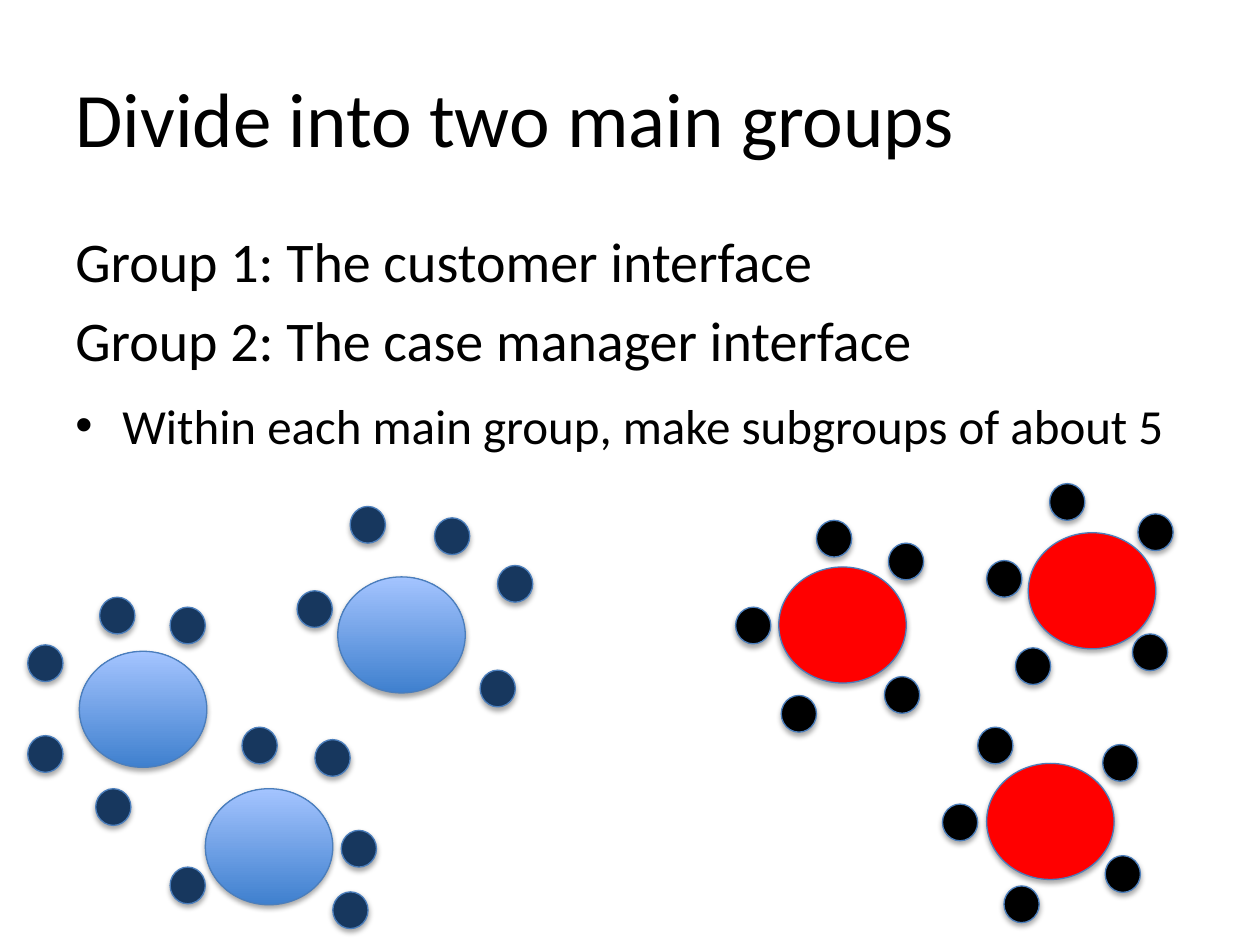
"""Build a slide that divides a room into two main groups with subgroups of five."""
from dataclasses import dataclass

from lxml.etree import SubElement
from pptx import Presentation
from pptx.dml.color import RGBColor
from pptx.enum.shapes import MSO_SHAPE
from pptx.enum.text import MSO_ANCHOR
from pptx.oxml.ns import qn
from pptx.util import Cm, Pt

TITLE = "Divide into two main groups"
GROUPS = ["Group 1: The customer interface", "Group 2: The case manager interface"]
INSTRUCTION = ["Within each main group, make subgroups of about 5"]

CUSTOMER_SUBGROUPS = [
    ((1.6, 13.13), [(2.01, 12.04), (0.56, 13), (0.56, 14.83), (3.43, 12.24), (1.93, 15.9)]),
    ((4.14, 15.9), [(6.35, 14.91), (4.88, 14.66), (3.43, 17.48), (6.71, 17.98), (6.88, 16.74)]),
    ((6.81, 11.63), [(10.03, 11.4), (8.76, 10.44), (7.06, 10.21), (5.99, 11.91), (9.68, 13.51)]),
]
MANAGER_SUBGROUPS = [
    ((15.7, 11.43), [(16.46, 10.49), (17.91, 10.95), (17.83, 13.64), (15.75, 14.02), (14.83, 12.24)]),
    ((19.89, 15.39), [(19.71, 14.66), (19, 16.21), (20.24, 17.86), (22.28, 17.25), (22.23, 15.01)]),
    ((20.73, 10.74), [(21.16, 9.75), (20.47, 13.06), (19.89, 11.3), (22.94, 10.36), (22.83, 12.78)]),
]
TABLE_SIZE = (2.57, 2.34)
PERSON_SIZE = (0.71, 0.74)
TEXT_LEFT, TEXT_WIDTH = 1.27, 22.86


@dataclass(frozen=True)
class Theme:
    font: str = "Calibri"
    text: str = "000000"
    title_size: int = 44
    group_size: int = 32
    instruction_size: int = 28
    outline: str = "4B7EBC"
    shadow: str = "000000"
    customer_table: tuple = ("3F80CE", "A4C4FF")
    customer_person: tuple = ("17375E",)
    manager_table: tuple = ("FF0000",)
    manager_person: tuple = ("000000",)


THEME = Theme()


def add_text(slide, lines, top, height, size, anchor=MSO_ANCHOR.TOP, spacing=0.0, bullet=False):
    box = slide.shapes.add_textbox(Cm(TEXT_LEFT), Cm(top), Cm(TEXT_WIDTH), Cm(height))
    frame = box.text_frame
    frame.word_wrap = True
    frame.vertical_anchor = anchor
    for index, line in enumerate(lines):
        paragraph = frame.paragraphs[0] if index == 0 else frame.add_paragraph()
        paragraph.space_before = Pt(size * spacing)
        run = paragraph.add_run()
        run.text = line
        run.font.name = THEME.font
        run.font.size = Pt(size)
        run.font.color.rgb = RGBColor.from_string(THEME.text)
        if bullet:
            properties = paragraph._p.get_or_add_pPr()
            properties.set("marL", str(Cm(0.95)))
            properties.set("indent", str(Cm(-0.95)))
            SubElement(properties, qn("a:buFont"), typeface="Arial")
            SubElement(properties, qn("a:buChar"), char="•")


def add_shadow(shape):
    shape.shadow.inherit = False
    effects = shape._element.spPr.find(qn("a:effectLst"))
    shadow = SubElement(effects, qn("a:outerShdw"), blurRad=str(Pt(3.1)), dist=str(Pt(1.8)),
                        dir="5400000", rotWithShape="0")
    color = SubElement(shadow, qn("a:srgbClr"), val=THEME.shadow)
    SubElement(color, qn("a:alpha"), val="35000")


def add_circle(slide, position, size, colors):
    shape = slide.shapes.add_shape(MSO_SHAPE.OVAL, *map(Cm, position + size))
    if len(colors) == 1:
        shape.fill.solid()
        shape.fill.fore_color.rgb = RGBColor.from_string(colors[0])
    else:
        shape.fill.gradient()
        shape.fill.gradient_angle = 90
        for stop, color in zip(shape.fill.gradient_stops, colors):
            stop.color.rgb = RGBColor.from_string(color)
    shape.line.color.rgb = RGBColor.from_string(THEME.outline)
    shape.line.width = Pt(0.75)
    add_shadow(shape)


def add_subgroups(slide, subgroups, table_colors, person_colors):
    for table, _ in subgroups:
        add_circle(slide, table, TABLE_SIZE, table_colors)
    for _, people in subgroups:
        for person in people:
            add_circle(slide, person, PERSON_SIZE, person_colors)


def main():
    presentation = Presentation()
    presentation.slide_width, presentation.slide_height = Cm(25.4), Cm(19.05)
    slide = presentation.slides.add_slide(presentation.slide_layouts[6])
    add_text(slide, [TITLE], 0.76, 3.18, THEME.title_size, anchor=MSO_ANCHOR.MIDDLE)
    add_text(slide, GROUPS, 4.45, 4.04, THEME.group_size, spacing=0.2)
    add_text(slide, INSTRUCTION, 7.85, 4.04, THEME.instruction_size, spacing=0.2, bullet=True)
    add_subgroups(slide, CUSTOMER_SUBGROUPS, THEME.customer_table, THEME.customer_person)
    add_subgroups(slide, MANAGER_SUBGROUPS, THEME.manager_table, THEME.manager_person)
    presentation.save("out.pptx")


if __name__ == "__main__":
    main()
